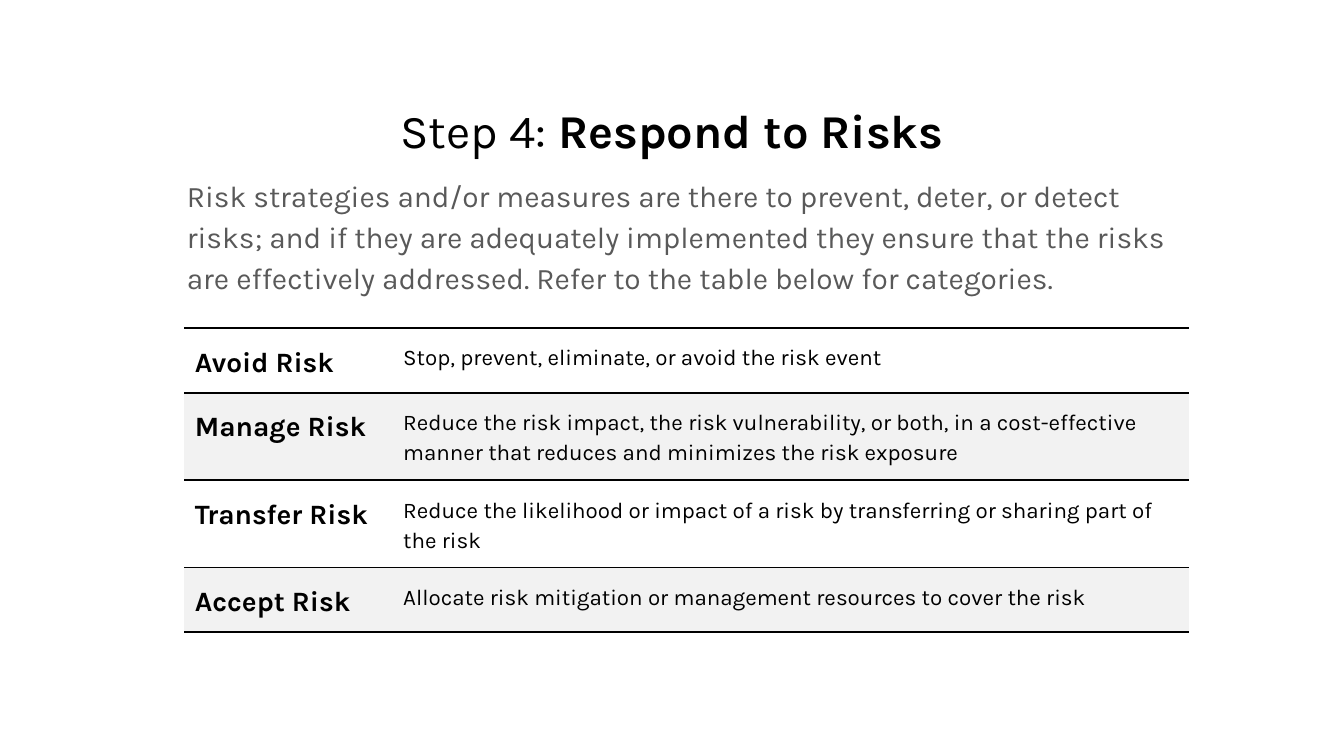
from dataclasses import dataclass

from lxml.etree import SubElement
from pptx import Presentation
from pptx.dml.color import RGBColor
from pptx.enum.text import MSO_ANCHOR as Anchor
from pptx.enum.text import MSO_AUTO_SIZE as AutoSize
from pptx.enum.text import PP_ALIGN as Align
from pptx.oxml.ns import qn
from pptx.util import Inches, Pt

FONT = "Karla"
COLORS = {"ink": "000000", "body": "595959", "band": "F2F2F2"}
SLIDE_WIDTH = 10


@dataclass(frozen=True)
class RiskResponse:
    name: str
    description: str
    height: float


RESPONSES = [
    RiskResponse("Avoid Risk", "Stop, prevent, eliminate, or avoid the risk event", 0.48),
    RiskResponse(
        "Manage Risk",
        "Reduce the risk impact, the risk vulnerability, or both, in a cost-effective "
        "manner that reduces and minimizes the risk exposure",
        0.65,
    ),
    RiskResponse(
        "Transfer Risk",
        "Reduce the likelihood or impact of a risk by transferring or sharing part of the risk",
        0.65,
    ),
    RiskResponse(
        "Accept Risk",
        "Allocate risk mitigation or management resources to cover the risk",
        0.48,
    ),
]
COLUMN_WIDTHS = [1.55, 5.93]


def add_run(paragraph, text: str, size: float, color: str, bold: bool = False) -> None:
    run = paragraph.add_run()
    run.text = text
    run.font.name = FONT
    run.font.size = Pt(size)
    run.font.bold = bold
    run.font.color.rgb = RGBColor.from_string(COLORS[color])


def place(shape, left: float, top: float, width: float, height: float, anchor: Anchor):
    shape.left, shape.top = Inches(left), Inches(top)
    shape.width, shape.height = Inches(width), Inches(height)
    frame = shape.text_frame
    frame.margin_left = frame.margin_right = Inches(0.1)
    frame.margin_top = frame.margin_bottom = Inches(0.1)
    frame.word_wrap = True
    frame.auto_size = AutoSize.NONE
    frame.vertical_anchor = anchor
    return frame.paragraphs[0]


def remove_bullet(paragraph) -> None:
    properties = paragraph._p.get_or_add_pPr()
    properties.set("marL", "0")
    properties.set("indent", "0")
    SubElement(properties, qn("a:buNone"))


def set_borders(cell) -> None:
    properties = cell._tc.get_or_add_tcPr()
    for side in ("L", "R"):
        line = SubElement(properties, qn(f"a:ln{side}"))
        SubElement(line, qn("a:noFill"))
    for side in ("T", "B"):
        line = SubElement(properties, qn(f"a:ln{side}"), w=str(Pt(1)))
        fill = SubElement(line, qn("a:solidFill"))
        SubElement(fill, qn("a:srgbClr"), val=COLORS["ink"])


def fill_cell(cell, text: str, size: float, bold: bool, banded: bool) -> None:
    set_borders(cell)
    if banded:
        cell.fill.solid()
        cell.fill.fore_color.rgb = RGBColor.from_string(COLORS["band"])
    else:
        cell.fill.background()
    cell.margin_left = cell.margin_right = Inches(0.08)
    cell.margin_top = cell.margin_bottom = Inches(0.1)
    cell.vertical_anchor = Anchor.TOP
    paragraph = cell.text_frame.paragraphs[0]
    paragraph.line_spacing = 1.15
    add_run(paragraph, text, size, "ink", bold)


def add_response_table(slide, left: float, top: float) -> None:
    height = sum(response.height for response in RESPONSES)
    table = slide.shapes.add_table(
        len(RESPONSES), len(COLUMN_WIDTHS),
        Inches(left), Inches(top), Inches(sum(COLUMN_WIDTHS)), Inches(height),
    ).table
    table.first_row = False
    table.horz_banding = False
    for column, width in zip(table.columns, COLUMN_WIDTHS):
        column.width = Inches(width)
    for index, response in enumerate(RESPONSES):
        table.rows[index].height = Inches(response.height)
        banded = index % 2 == 1
        fill_cell(table.cell(index, 0), response.name, 15, True, banded)
        fill_cell(table.cell(index, 1), response.description, 12, False, banded)


def main() -> None:
    presentation = Presentation()
    presentation.slide_width = Inches(SLIDE_WIDTH)
    presentation.slide_height = Inches(SLIDE_WIDTH * 9 / 16)
    slide = presentation.slides.add_slide(presentation.slide_layouts[1])

    title = place(slide.shapes.title, 0.34, 0.65, 9.32, 0.63, Anchor.MIDDLE)
    title.alignment = Align.CENTER
    add_run(title, "Step 4:", 25.2, "ink")
    add_run(title, " Respond to Risks", 25.2, "ink", bold=True)

    body = place(slide.placeholders[1], 1.29, 1.18, 7.56, 3.1, Anchor.TOP)
    body.line_spacing = 1.15
    body.space_before = Pt(0)
    body.space_after = Pt(12)
    remove_bullet(body)
    add_run(
        body,
        "Risk strategies and/or measures are there to prevent, deter, or detect risks; "
        "and if they are adequately implemented they ensure that the risks are "
        "effectively addressed. Refer to the table below for categories.",
        16,
        "body",
    )

    add_response_table(slide, 1.37, 2.44)
    presentation.save("out.pptx")


if __name__ == "__main__":
    main()
